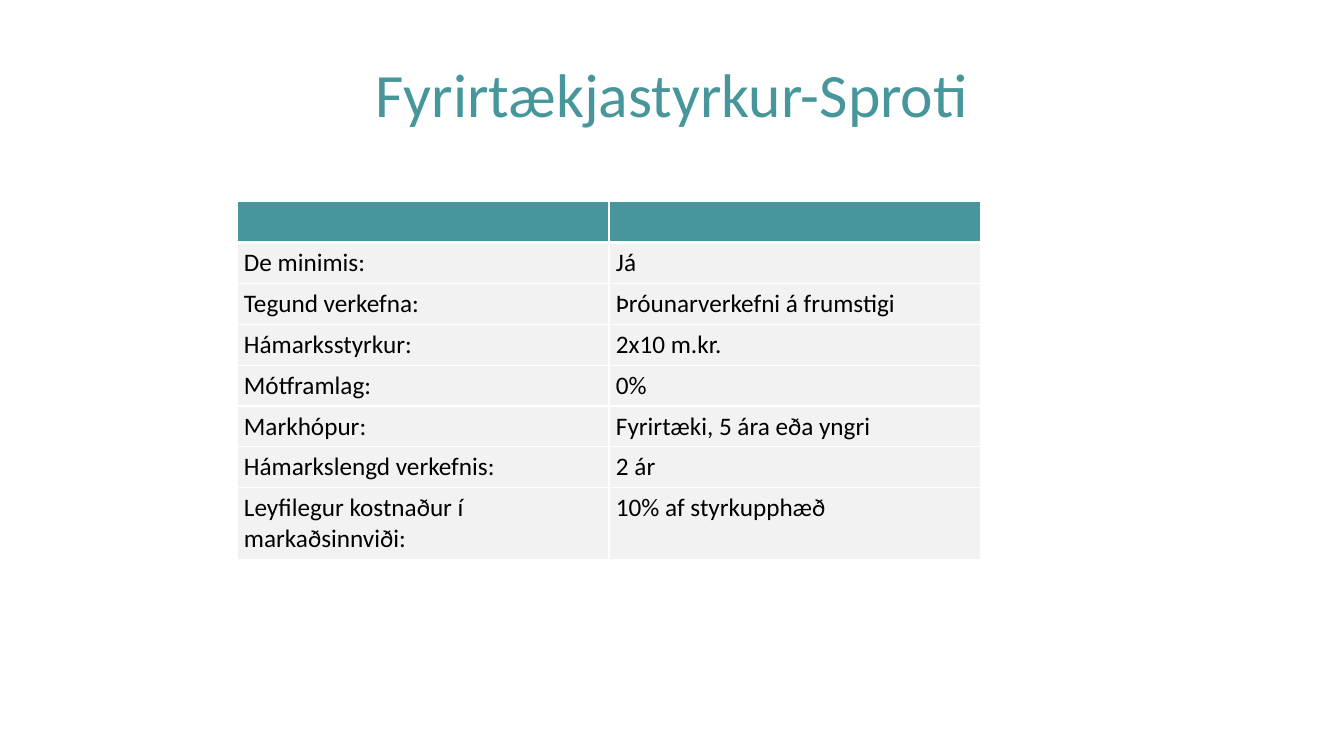
from lxml.etree import SubElement as Sub
from pptx import Presentation
from pptx.dml.color import RGBColor as Rgb
from pptx.enum.text import MSO_ANCHOR as Anchor, PP_ALIGN as Align
from pptx.oxml.ns import qn
from pptx.util import Inches, Pt

HUES = {"teal": "46969B", "pale": "F2F2F2", "white": "FFFFFF", "ink": "000000"}
WIDE, HIGH = Inches(13.33), Inches(7.5)
ROWS = [
    ("", ""),
    ("De minimis:", "Já"),
    ("Tegund verkefna:", "Þróunarverkefni á frumstigi"),
    ("Hámarksstyrkur:", "2x10 m.kr."),
    ("Mótframlag:", "0%"),
    ("Markhópur:", "Fyrirtæki, 5 ára eða yngri"),
    ("Hámarkslengd verkefnis:", "2 ár"),
    ("Leyfilegur kostnaður í markaðsinnviði:", "10% af styrkupphæð"),
]


def hue(name):
    return Rgb.from_string(HUES[name])


def style(para, size, color):
    font = para.font
    font.name, font.size = "Calibri", Pt(size)
    font.color.rgb = hue(color)


def paint(shape, color):
    shape.fill.solid()
    shape.fill.fore_color.rgb = hue(color)


def edge(cell, head, below):
    props = cell._tc.get_or_add_tcPr()
    widths = {"L": 1, "R": 1, "T": 3 if below else 1, "B": 3 if head else 1}
    for side, width in widths.items():
        line = Sub(props, qn(f"a:ln{side}"), w=str(Pt(width)))
        fill = Sub(line, qn("a:solidFill"))
        Sub(fill, qn("a:srgbClr"), val=HUES["white"])


def title(slide, box, text):
    shape = slide.shapes.title
    shape.left, shape.top, shape.width, shape.height = box
    paint(shape, "white")
    frame = shape.text_frame
    frame.text = text
    frame.vertical_anchor = Anchor.MIDDLE
    para = frame.paragraphs[0]
    para.alignment = Align.CENTER
    style(para, 44, "teal")


def facts(slide, box, rows):
    table = slide.shapes.add_table(len(rows), len(rows[0]), *box).table
    for r, row in enumerate(rows):
        table.rows[r].height = Pt(29.2)
        for c, text in enumerate(row):
            cell = table.cell(r, c)
            cell.margin_left = cell.margin_right = Inches(0.07)
            cell.margin_top = cell.margin_bottom = Inches(0.05)
            edge(cell, r == 0, r == 1)
            paint(cell, "pale" if r else "teal")
            cell.text = text
            style(cell.text_frame.paragraphs[0], 18, "ink")
    table.rows[len(rows) - 1].height = Inches(0.7)


def main():
    deck = Presentation()
    deck.slide_width, deck.slide_height = WIDE, HIGH
    slide = deck.slides.add_slide(deck.slide_layouts[5])
    side = int(WIDE * 0.05)
    title(slide, (side, int(HIGH * 0.04), WIDE - 2 * side, Inches(1.25)),
          "Fyrirtækjastyrkur-Sproti")
    facts(slide, (Inches(2.35), Inches(2), Inches(7.38), Inches(3.54)), ROWS)
    deck.save("out.pptx")


if __name__ == "__main__":
    main()
